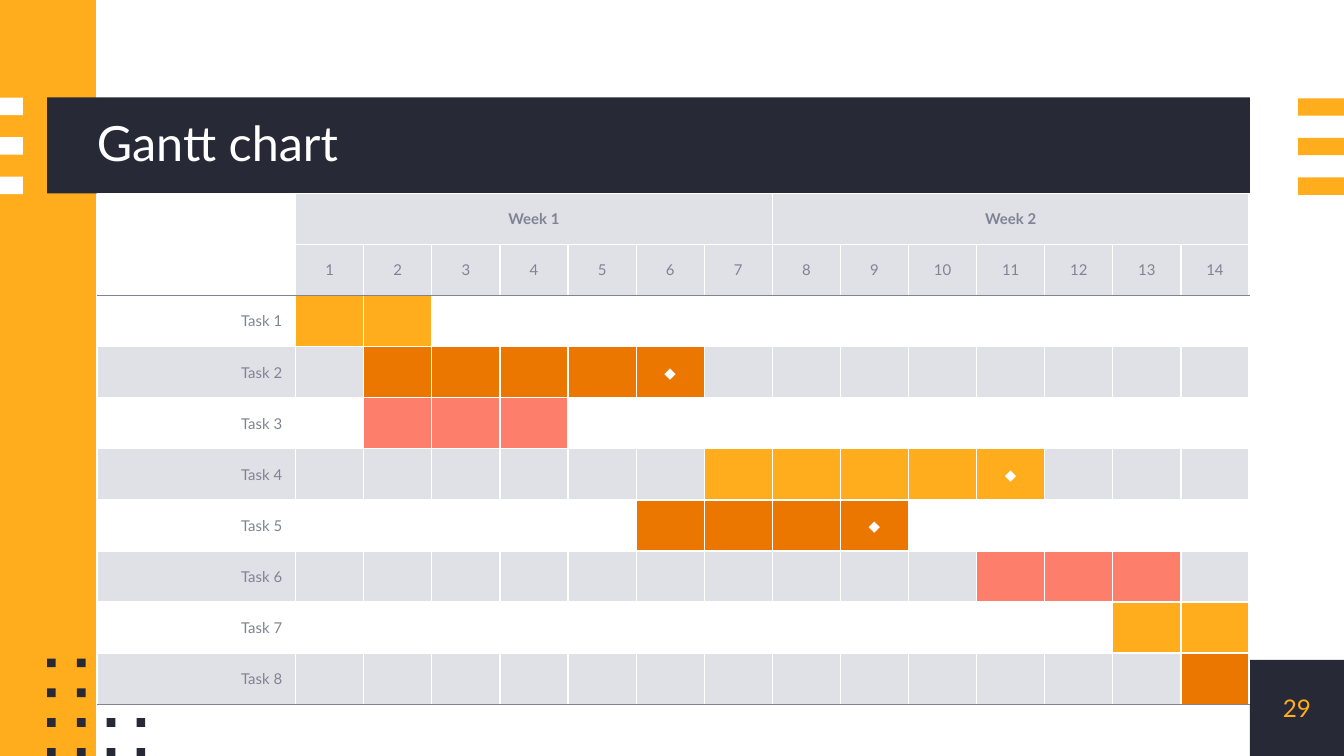
from dataclasses import dataclass
from itertools import product

from lxml.etree import SubElement
from pptx import Presentation
from pptx.dml.color import RGBColor
from pptx.enum.shapes import MSO_SHAPE
from pptx.enum.text import MSO_ANCHOR, PP_ALIGN
from pptx.oxml.ns import qn
from pptx.util import Inches, Pt


@dataclass(frozen=True)
class Theme:
    font: str = "Lato"
    dark: str = "272A36"
    amber: str = "FFAD1D"
    orange: str = "EB7700"
    coral: str = "FD7E6B"
    band: str = "E0E0E7"
    grey: str = "808392"
    white: str = "FFFFFF"
    title_size: int = 26
    number_size: int = 13
    table_size: int = 8
    border: float = 0.75


THEME = Theme()
DAYS = 14
WEEK = 7
HEADER_ROWS = 2
# Name, first day, last day, colour, ends in a milestone
TASKS = [
    ("Task 1", 1, 2, THEME.amber, False),
    ("Task 2", 2, 6, THEME.orange, True),
    ("Task 3", 2, 4, THEME.coral, False),
    ("Task 4", 7, 11, THEME.amber, True),
    ("Task 5", 6, 9, THEME.orange, True),
    ("Task 6", 11, 13, THEME.coral, False),
    ("Task 7", 13, 14, THEME.amber, False),
    ("Task 8", 14, 14, THEME.orange, False),
]


def grid(units):
    """Turn grid units into a length; the slide is 100 columns by 56.25 rows."""
    return Inches(units / 10)


def set_all(target, values):
    for name, value in values.items():
        setattr(target, name, value)


class SlideBuilder:
    def __init__(self, slide, theme):
        self.slide = slide
        self.theme = theme

    def block(self, column, row, width, height, color):
        shape = self.slide.shapes.add_shape(
            MSO_SHAPE.RECTANGLE, *map(grid, (column, row, width, height)))
        shape.shadow.inherit = False
        shape.fill.solid()
        shape.fill.fore_color.rgb = RGBColor.from_string(color)
        shape.line.fill.background()

    def add_span(self, para, text, size, color, align=PP_ALIGN.LEFT, bold=False):
        para.alignment = align
        span = para.add_run()
        span.text = text
        set_all(span.font, {"name": self.theme.font, "size": Pt(size), "bold": bold})
        span.font.color.rgb = RGBColor.from_string(color)

    def label(self, column, row, width, height, text, size, color, align, spacing=1.0):
        box = self.slide.shapes.add_textbox(*map(grid, (column, row, width, height)))
        set_all(box.text_frame, {
            "word_wrap": True, "vertical_anchor": MSO_ANCHOR.MIDDLE,
            "margin_left": 0, "margin_top": 0, "margin_right": 0, "margin_bottom": 0})
        para = box.text_frame.paragraphs[0]
        para.line_spacing = spacing
        self.add_span(para, text, size, color, align)

    def table(self, column, row, widths, heights):
        frame = self.slide.shapes.add_table(
            len(heights), len(widths),
            *map(grid, (column, row, sum(widths), sum(heights))))
        table = frame.table
        set_all(table, {"first_row": False, "horz_banding": False})
        for table_column, width in zip(table.columns, widths):
            table_column.width = grid(width)
        for table_row, height in zip(table.rows, heights):
            table_row.height = grid(height)
        return table

    def cell(self, cell, fill=None, text="", color=None, align=PP_ALIGN.CENTER,
             bold=False, top=None, bottom=None):
        theme = self.theme
        # An empty cell has a tall default line, so it gets no vertical margin
        margin = grid(0.5) if text else 0
        set_all(cell, {"vertical_anchor": MSO_ANCHOR.MIDDLE,
                       "margin_top": margin, "margin_bottom": margin})
        sides = {"a:lnL": None, "a:lnR": None, "a:lnT": top, "a:lnB": bottom}
        properties = cell._tc.get_or_add_tcPr()
        for tag, side_color in sides.items():
            line = SubElement(properties, qn(tag), w=str(Pt(theme.border)))
            paint = SubElement(line, qn("a:solidFill"))
            SubElement(paint, qn("a:srgbClr"), val=side_color or theme.white)
        if fill:
            cell.fill.solid()
            cell.fill.fore_color.rgb = RGBColor.from_string(fill)
        else:
            cell.fill.background()
        if text:
            self.add_span(cell.text_frame.paragraphs[0], text, theme.table_size,
                          color or theme.grey, align, bold)

    def gantt(self, column, row, name_width, day_width, row_height):
        theme = self.theme
        table = self.table(column, row, [name_width] + [day_width] * DAYS,
                           [row_height] * (HEADER_ROWS + len(TASKS)))
        for first in range(1, DAYS + 1, WEEK):
            table.cell(0, first).merge(table.cell(0, first + WEEK - 1))
        self.cell(table.cell(0, 0))
        self.cell(table.cell(1, 0), bottom=theme.grey)
        for day in range(1, DAYS + 1):
            week, offset = divmod(day - 1, WEEK)
            week_name = "" if offset else f"Week {week + 1}"
            self.cell(table.cell(0, day), theme.band, week_name, bold=True)
            self.cell(table.cell(1, day), theme.band, str(day), bottom=theme.grey)

        for index, (name, start, end, color, milestone) in enumerate(TASKS):
            table_row = index + HEADER_ROWS
            band = theme.band if index % 2 else None
            edges = {"top": theme.grey if index == 0 else None,
                     "bottom": theme.grey if index == len(TASKS) - 1 else None}
            self.cell(table.cell(table_row, 0), band, name,
                      align=PP_ALIGN.RIGHT, **edges)
            for day in range(1, DAYS + 1):
                fill = color if start <= day <= end else band
                mark = "◆" if milestone and day == end else ""
                self.cell(table.cell(table_row, day), fill, mark, theme.white, **edges)


def main():
    deck = Presentation()
    set_all(deck, {"slide_width": grid(100), "slide_height": grid(56.25)})
    page = SlideBuilder(deck.slides.add_slide(deck.slide_layouts[6]), THEME)

    number_area = (93, 49.1, 7, 7.15)
    page.block(*number_area, THEME.dark)
    page.block(0, 0, 7.15, 56.25, THEME.amber)
    page.block(3.5, 7.25, 89.5, 7.15, THEME.dark)
    for stripe in range(3):
        row = 7.27 + 2.94 * stripe
        page.block(0, row, 1.7, 1.3, THEME.white)
        page.block(96.6, row + 0.05, 3.4, 1.3, THEME.amber)
    for column, row in product(range(4), repeat=2):
        if column < 2 or row >= 2:  # the table covers the other corner
            page.block(3.5 + 2.22 * column, 49 + 2.22 * row, 0.65, 0.65, THEME.dark)

    page.label(7.2, 7.25, 85.8, 7.15, "Gantt chart", THEME.title_size,
               THEME.white, PP_ALIGN.LEFT, spacing=0.9)
    page.label(*number_area, "29", THEME.number_size, THEME.amber, PP_ALIGN.CENTER)
    page.gantt(7.25, 14.4, name_width=14.75, day_width=5.07, row_height=3.8)
    deck.save("out.pptx")


if __name__ == "__main__":
    main()
